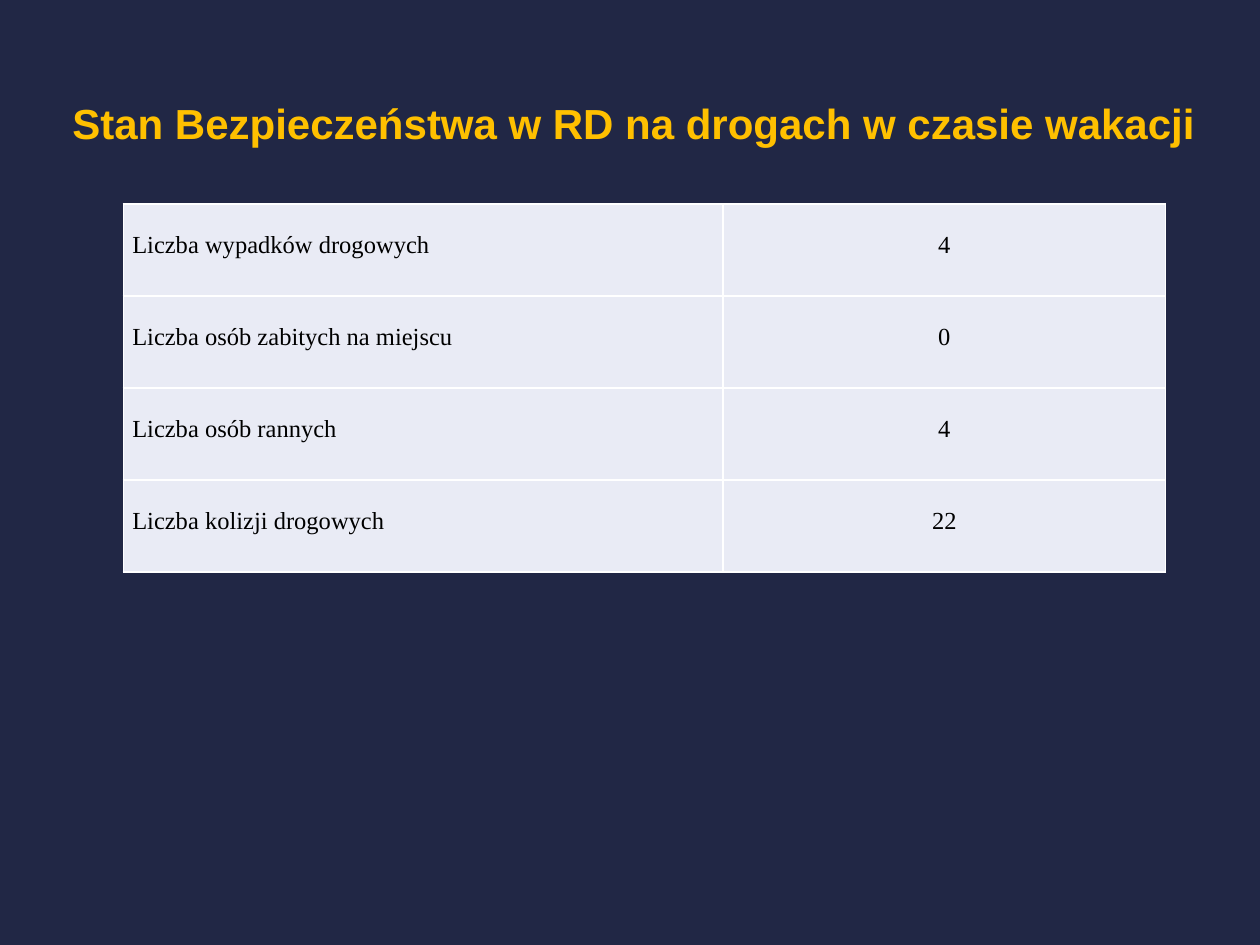
from lxml.etree import SubElement
from pptx import Presentation
from pptx.dml.color import RGBColor
from pptx.enum.text import MSO_ANCHOR, PP_ALIGN
from pptx.oxml.ns import qn
from pptx.util import Inches, Pt

COLORS = {
    "background": "212745",
    "title": "FFC000",
    "cell": "E9EBF5",
    "border": "FFFFFF",
    "text": "000000",
}
STATISTICS = [
    ("Liczba wypadków drogowych", "4"),
    ("Liczba osób zabitych na miejscu", "0"),
    ("Liczba osób rannych", "4"),
    ("Liczba kolizji drogowych", "22"),
]


def write_text(frame, text, *, font, size, color, bold=False,
               align=PP_ALIGN.LEFT, margins=(0, 0, 0, 0)):
    """Fill a text frame; margins are left, top, right, bottom in inches."""
    frame.word_wrap = True
    (frame.margin_left, frame.margin_top,
     frame.margin_right, frame.margin_bottom) = map(Inches, margins)
    paragraph = frame.paragraphs[0]
    paragraph.alignment = align
    run = paragraph.add_run()
    run.text = text
    run.font.name = font
    run.font.size = Pt(size)
    run.font.bold = bold
    run.font.color.rgb = RGBColor.from_string(color)


class SlideBuilder:
    title_font = "Arial"
    table_font = "Times New Roman"

    def __init__(self, presentation):
        self.slide = presentation.slides.add_slide(presentation.slide_layouts[5])
        fill = self.slide.background.fill
        fill.solid()
        fill.fore_color.rgb = RGBColor.from_string(COLORS["background"])

    def add_title(self, text, left, top, width, height):
        title = self.slide.shapes.title
        title.left, title.top = Inches(left), Inches(top)
        title.width, title.height = Inches(width), Inches(height)
        title.text_frame.vertical_anchor = MSO_ANCHOR.MIDDLE
        write_text(title.text_frame, text, font=self.title_font, size=24,
                   color=COLORS["title"], bold=True, align=PP_ALIGN.CENTER,
                   margins=(0.1, 0.15, 0.19, 0.05))

    def add_table(self, rows, left, top, column_widths, row_height):
        table_shape = self.slide.shapes.add_table(
            len(rows), len(column_widths), Inches(left), Inches(top),
            Inches(sum(column_widths)), Inches(row_height * len(rows)))
        table = table_shape.table
        table.first_row = table.horz_banding = False
        for column, width in zip(table.columns, column_widths):
            column.width = Inches(width)
        for row_index, values in enumerate(rows):
            table.rows[row_index].height = Inches(row_height)
            for column_index, value in enumerate(values):
                align = PP_ALIGN.CENTER if column_index else PP_ALIGN.LEFT
                self.format_cell(table.cell(row_index, column_index), value, align)

    def format_cell(self, cell, text, align):
        write_text(cell.text_frame, text, font=self.table_font, size=14,
                   color=COLORS["text"], align=align)
        cell.margin_left = cell.margin_right = Inches(0.07)
        cell.margin_top, cell.margin_bottom = Inches(0.22), 0
        cell.vertical_anchor = MSO_ANCHOR.TOP
        # Borders come before the fill in the cell properties
        properties = cell._tc.get_or_add_tcPr()
        for side in ("lnL", "lnR", "lnT", "lnB"):
            line = SubElement(properties, qn(f"a:{side}"), w=str(Pt(1)))
            solid_fill = SubElement(line, qn("a:solidFill"))
            SubElement(solid_fill, qn("a:srgbClr"), val=COLORS["border"])
        cell.fill.solid()
        cell.fill.fore_color.rgb = RGBColor.from_string(COLORS["cell"])


def main():
    presentation = Presentation()
    presentation.slide_width = Inches(10)
    presentation.slide_height = Inches(7.5)
    builder = SlideBuilder(presentation)

    # Heading
    builder.add_title("Stan Bezpieczeństwa w RD na drogach w czasie wakacji",
                      0.43, 0.3, 9.29, 1.25)
    # Road statistics
    builder.add_table(STATISTICS, 0.98, 1.62, (4.76, 3.51), 0.73)

    presentation.save("out.pptx")


if __name__ == "__main__":
    main()
